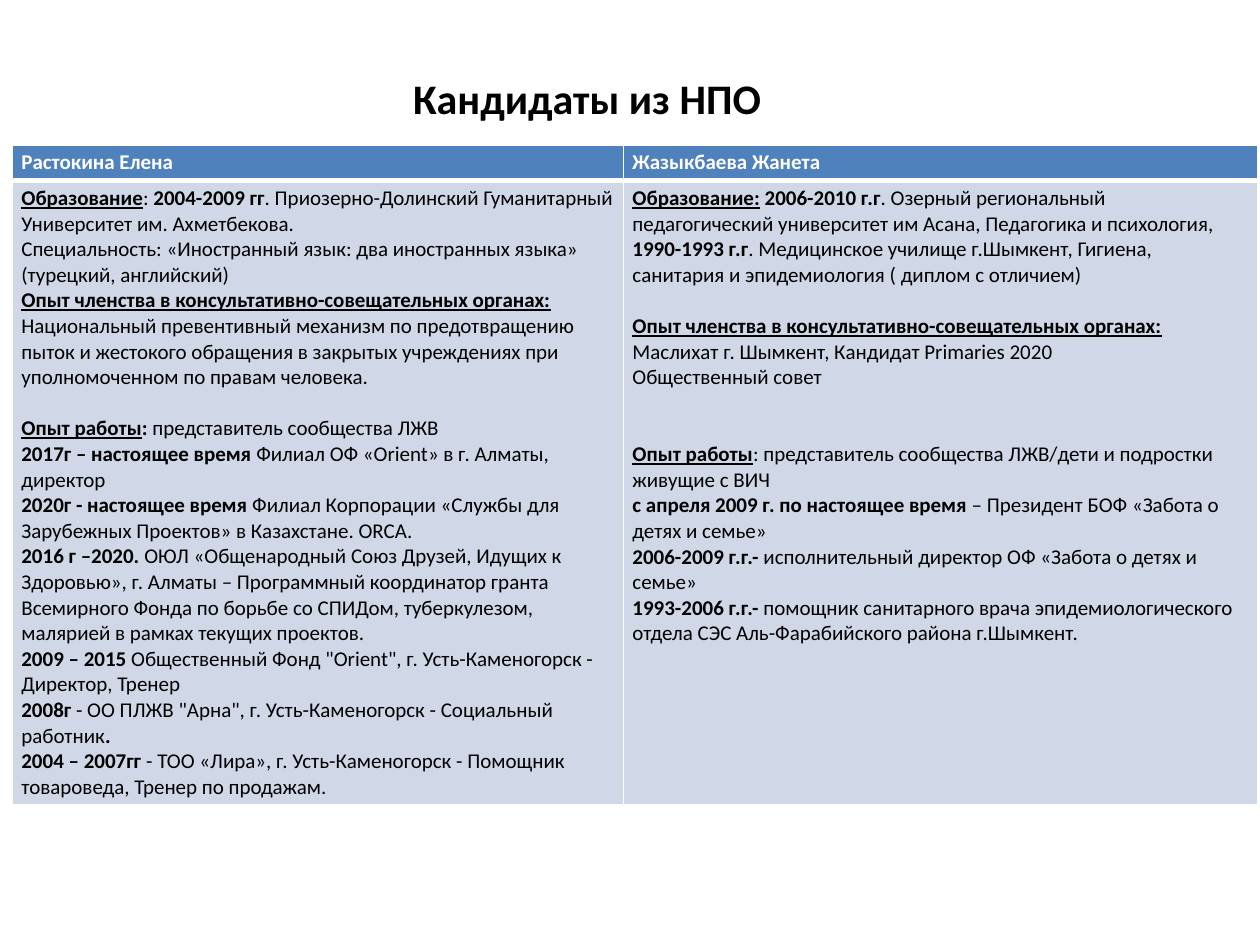
from lxml import etree
from pptx import Presentation, util as u
from pptx.dml.color import RGBColor
from pptx.enum import text
from pptx.oxml import ns

HUES = {"ink": "000000", "head": "4F81BD", "body": "D0D8E8", "white": "FFFFFF"}
NAMES = ["Растокина Елена", "Жазыкбаева Жанета"]
STUDY = "Образование"
BOARD = "Опыт членства в консультативно-совещательных органах:"
WORK = "Опыт работы"

ELENA = [
    (0, ("bu", STUDY), ("", ": "), ("b", "2004-2009 гг"),
     ("", ". Приозерно-Долинский Гуманитарный Университет им. Ахметбекова.")),
    (0, ("", "Специальность: «Иностранный язык: два иностранных языка» (турецкий, английский)")),
    (0, ("bu", BOARD + " "),
     ("", "Национальный превентивный механизм по предотвращению пыток и жестокого "
          "обращения в закрытых учреждениях при уполномоченном по правам человека.")),
    (1, ("bu", WORK), ("b", ": "), ("", "представитель сообщества ЛЖВ")),
    (0, ("b", "2017г – настоящее время "), ("", "Филиал ОФ «Orient» в г. Алматы, директор")),
    (0, ("b", "2020г - настоящее время "),
     ("", "Филиал Корпорации «Службы для Зарубежных Проектов» в Казахстане. ORCA.")),
    (0, ("b", "2016 г –2020. "),
     ("", "ОЮЛ «Общенародный Союз Друзей, Идущих к Здоровью», г. Алматы – Программный "
          "координатор гранта Всемирного Фонда по борьбе со СПИДом, туберкулезом, "
          "малярией в рамках текущих проектов.")),
    (0, ("b", "2009 – 2015 "),
     ("", "Общественный Фонд \"Orient\", г. Усть-Каменогорск - Директор, Тренер")),
    (0, ("b", "2008г"),
     ("", " - ОО ПЛЖВ \"Арна\", г. Усть-Каменогорск - Социальный работник"), ("b", ".")),
    (0, ("b", "2004 – 2007гг "),
     ("", "- ТОО «Лира», г. Усть-Каменогорск - Помощник товароведа, Тренер по продажам.")),
]
JANETA = [
    (0, ("bu", STUDY + ":"), ("b", " 2006-2010 г.г"),
     ("", ". Озерный региональный педагогический университет им Асана, "
          "Педагогика и психология,")),
    (0, ("b", "1990-1993 г.г"),
     ("", ". Медицинское училище г.Шымкент, Гигиена, санитария и эпидемиология "
          "( диплом с отличием)")),
    (1, ("bu", BOARD)),
    (0, ("", "Маслихат г. Шымкент, Кандидат Primaries 2020")),
    (0, ("", "Общественный совет")),
    (2, ("bu", WORK), ("", ": представитель сообщества ЛЖВ/дети и подростки живущие с ВИЧ")),
    (0, ("b", "с апреля 2009 г. по настоящее время "),
     ("", "– Президент БОФ «Забота о детях и семье»")),
    (0, ("b", "2006-2009 г.г.- "),
     ("", "исполнительный директор ОФ «Забота о детях и семье»")),
    (0, ("b", "1993-2006 г.г.- "),
     ("", "помощник санитарного врача эпидемиологического отдела СЭС "
          "Аль-Фарабийского района г.Шымкент.")),
]


class Deck:
    """Holds the style and the current slide."""

    face = "Calibri"
    size = 12
    line = 14.65

    def __init__(self):
        self.file = Presentation()
        self.file.slide_width, self.file.slide_height = u.Inches(10), u.Inches(7.5)
        self.slide = self.file.slides.add_slide(self.file.slide_layouts[5])

    def hue(self, name):
        return RGBColor.from_string(HUES[name])

    def style(self, para, size, hue, bold=None):
        font = para.font
        font.name, font.size, font.bold = self.face, u.Pt(size), bold
        font.color.rgb = self.hue(hue)

    def title(self, words, *box):
        shape = self.slide.shapes.title
        shape.left, shape.top, shape.width, shape.height = map(u.Inches, box)
        frame = shape.text_frame
        frame.text = words
        frame.vertical_anchor = text.MSO_ANCHOR.MIDDLE
        para = frame.paragraphs[0]
        para.alignment = text.PP_ALIGN.CENTER
        self.style(para, 24, "ink", True)

    def table(self, left, top, cols, rows):
        grid = self.slide.shapes.add_table(
            len(rows), len(cols), u.Inches(left), u.Inches(top),
            u.Inches(sum(cols)), u.Inches(sum(rows))).table
        for part, wide in zip(grid.columns, cols):
            part.width = u.Inches(wide)
        for part, high in zip(grid.rows, rows):
            part.height = u.Inches(high)
        return grid

    def border(self, cell, side, width):
        edge = etree.Element(ns.qn("a:" + side), w=str(u.Pt(width)))
        fill = etree.SubElement(edge, ns.qn("a:solidFill"))
        etree.SubElement(fill, ns.qn("a:srgbClr"), val=HUES["white"])
        cell._tc.get_or_add_tcPr().insert(0, edge)

    def cell(self, cell, paras, fill, ink):
        cell.fill.solid()
        cell.fill.fore_color.rgb = self.hue(fill)
        cell.margin_left = cell.margin_right = u.Inches(0.07)
        cell.margin_top = cell.margin_bottom = u.Inches(0.04)
        frame = cell.text_frame
        for i, (gap, *runs) in enumerate(paras):
            para = frame.add_paragraph() if i else frame.paragraphs[0]
            para.space_before = u.Pt(gap * self.line)
            self.style(para, self.size, ink)
            for kind, words in runs:
                run = para.add_run()
                run.text = words
                run.font.bold = "b" in kind
                run.font.underline = "u" in kind


def main():
    deck = Deck()
    deck.title("Кандидаты из НПО", 0.35, 0.6, 8.62, 0.35)
    grid = deck.table(0.1, 1.15, [4.85, 5.03], [0.28, 4.67])
    for col, (name, paras) in enumerate(zip(NAMES, [ELENA, JANETA])):
        head, body = grid.cell(0, col), grid.cell(1, col)
        deck.cell(head, [(0, ("b", name))], "head", "white")
        deck.cell(body, paras, "body", "ink")
        deck.border(head, "lnB", 3)
        deck.border(body, "lnT", 3)
    deck.file.save("out.pptx")


if __name__ == "__main__":
    main()
